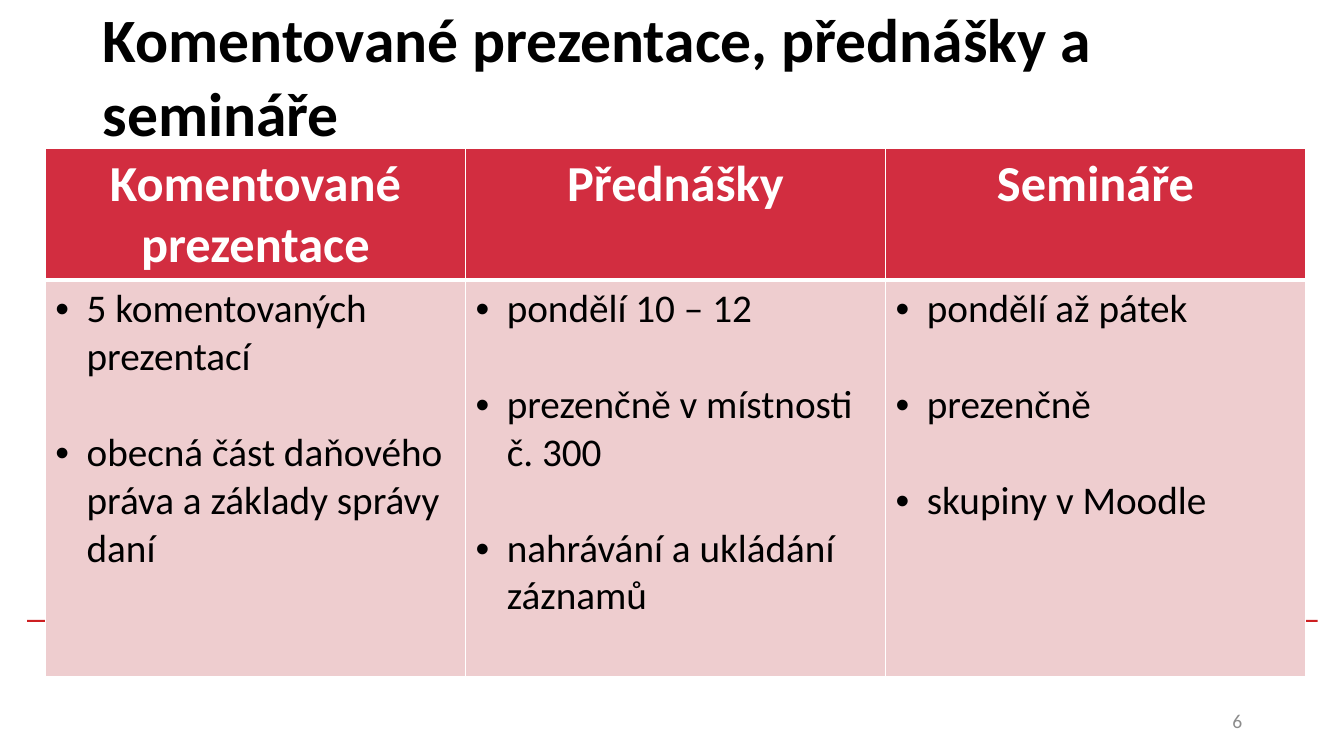
from lxml import etree
from pptx import Presentation
from pptx.dml.color import RGBColor
from pptx.enum.shapes import MSO_SHAPE
from pptx.enum.text import MSO_ANCHOR, PP_ALIGN
from pptx.oxml import parse_xml
from pptx.oxml.ns import nsdecls, qn
from pptx.util import Inches, Pt

BLACK = RGBColor(0x00, 0x00, 0x00)
WHITE = RGBColor(0xFF, 0xFF, 0xFF)
GREY = RGBColor(0x8C, 0x8C, 0x8C)
RULE_RED = RGBColor(0xCD, 0x1F, 0x21)
HEADER_RED = RGBColor(0xD2, 0x2D, 0x40)
BODY_PINK = RGBColor(0xEE, 0xCD, 0xCF)

COLUMNS = {
    "Komentované prezentace": [
        "5 komentovaných prezentací",
        "obecná část daňového práva a základy správy daní",
    ],
    "Přednášky": [
        "pondělí 10 – 12",
        "prezenčně v místnosti č. 300",
        "nahrávání a ukládání záznamů",
    ],
    "Semináře": ["pondělí až pátek", "prezenčně", "skupiny v Moodle"],
}


def write(p, text, size, color, bold=False, align=PP_ALIGN.LEFT):
    p.alignment = align
    r = p.add_run()
    r.text = text
    for name, value in {"name": "Calibri", "size": Pt(size), "bold": bold}.items():
        setattr(r.font, name, value)
    r.font.color.rgb = color


def style_cell(cell, fill, bottom_width):
    """Draw white borders around the cell and fill it."""
    tcPr = cell._tc.get_or_add_tcPr()
    for side, width in {"L": 1, "R": 1, "T": 1, "B": bottom_width}.items():
        tcPr.append(parse_xml(
            f'<a:ln{side} {nsdecls("a")} w="{Pt(width)}"><a:solidFill>'
            f'<a:srgbClr val="{WHITE}"/></a:solidFill></a:ln{side}>'))
    cell.fill.solid()
    cell.fill.fore_color.rgb = fill


prs = Presentation()
prs.slide_width, prs.slide_height = Inches(13.33), Inches(7.5)
s = prs.slides.add_slide(prs.slide_layouts[6])

rule = s.shapes.add_shape(MSO_SHAPE.RECTANGLE, Inches(0.27), Inches(6.15),
                          Inches(12.8), Inches(0.02))
rule.shadow.inherit = False
rule.fill.solid()
rule.fill.fore_color.rgb = RULE_RED
rule.line.fill.background()

title = s.shapes.add_textbox(Inches(0.92), Inches(0.02), Inches(11.5), Inches(1.45))
number = s.shapes.add_textbox(Inches(9.42), Inches(6.95), Inches(3), Inches(0.4))
for sp in (title, number):
    sp.text_frame.word_wrap = True
    sp.text_frame.vertical_anchor = MSO_ANCHOR.MIDDLE
write(title.text_frame.paragraphs[0], "Komentované prezentace, přednášky a semináře",
      44, BLACK, bold=True)
write(number.text_frame.paragraphs[0], "6", 14, GREY, align=PP_ALIGN.RIGHT)

table = s.shapes.add_table(2, len(COLUMNS), Inches(0.45), Inches(1.47),
                           Inches(12.5), Inches(5.24)).table
table.rows[0].height = Inches(1.31)
table.rows[1].height = Inches(3.93)

for col, (heading, items) in enumerate(COLUMNS.items()):
    header, body = table.cell(0, col), table.cell(1, col)
    style_cell(header, HEADER_RED, 3)
    style_cell(body, BODY_PINK, 1)
    body._tc.tcPr.find(qn("a:lnT")).set("w", str(Pt(3)))
    write(header.text_frame.paragraphs[0], heading, 36, WHITE,
          bold=True, align=PP_ALIGN.CENTER)

    tf = body.text_frame
    for i, item in enumerate(items):
        p = tf.add_paragraph() if i else tf.paragraphs[0]
        if i:
            p.space_before = Pt(34.2)
        pPr = p._p.get_or_add_pPr()
        pPr.set("marL", str(Inches(0.31)))
        pPr.set("indent", str(-Inches(0.31)))
        etree.SubElement(pPr, qn("a:buFont")).set("typeface", "Arial")
        etree.SubElement(pPr, qn("a:buChar")).set("char", "•")
        write(p, item, 28, BLACK)

prs.save("out.pptx")
